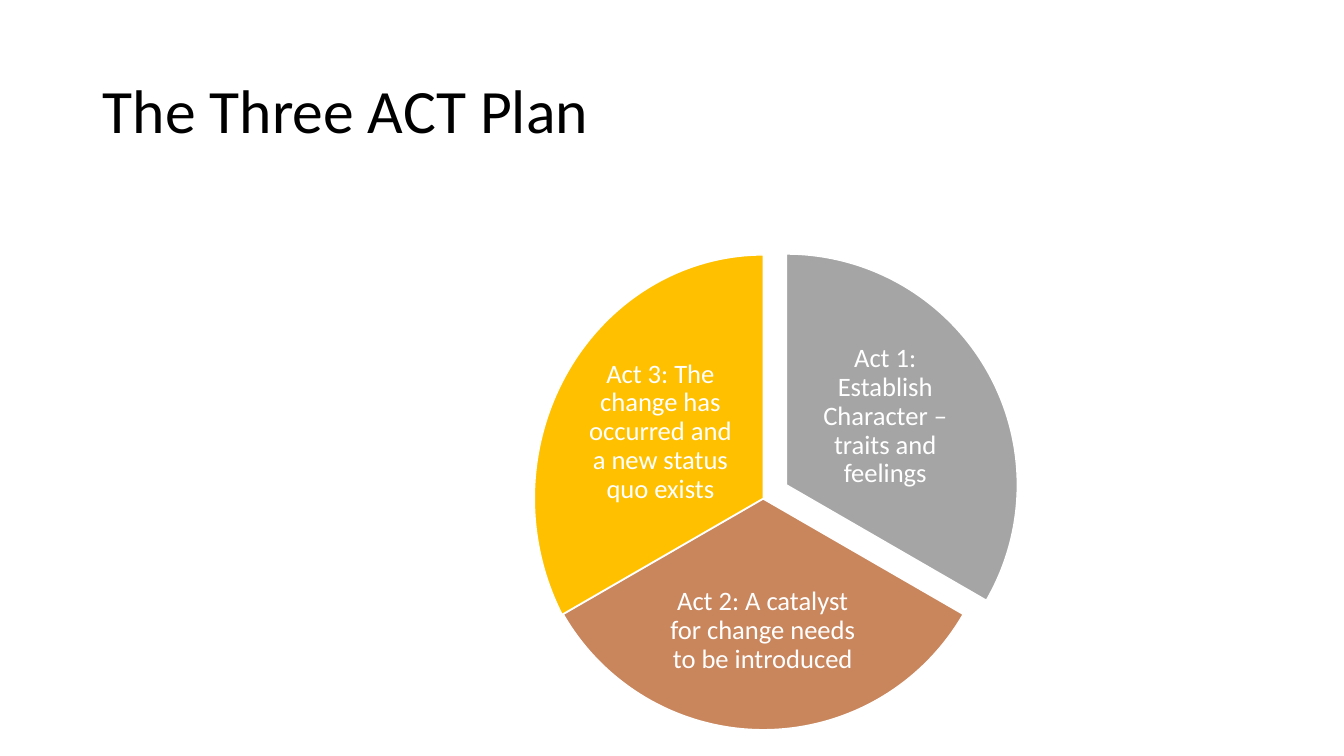
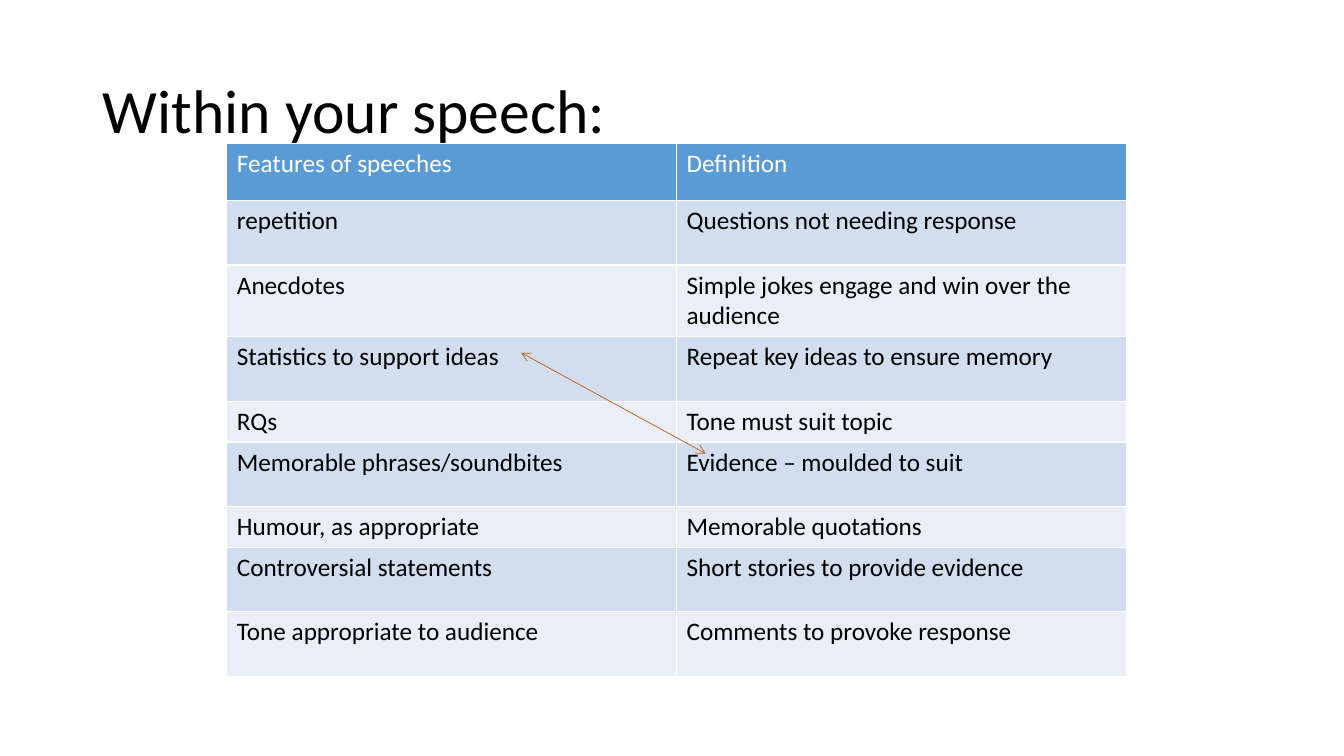
from lxml import etree
from pptx import Presentation
from pptx import util as u
from pptx.dml.color import RGBColor
from pptx.enum import shapes, text
from pptx.oxml.ns import qn

FONT = "Calibri"
BLACK = "000000"
WHITE = "FFFFFF"
HEADER = "5B9BD5"
BANDS = ("D2DEEF", "EAEFF7")
ARROW = "C55A11"
ADJUSTMENT_PER_DEGREE = 0.6

ACTS = [
    ("Act 1: Establish Character – traits and feelings", "A5A5A5",
     (5.51, 2.52, 4.58, 4.58), (270, 30), (8, 3.37, 1.56, 1.53)),
    ("Act 2: A catalyst for change needs to be introduced", "C9855C",
     (5.28, 2.66, 4.58, 4.58), (30, 150), (6.53, 5.55, 2.07, 1.42)),
    ("Act 3: The change has occurred and a new status quo exists", "FFC000",
     (5.3, 2.53, 4.54, 4.83), (150, 270), (5.78, 3.48, 1.54, 1.61)),
]

FEATURES = [
    ("Features of speeches", "Definition", 0.57),
    ("repetition", "Questions not needing response", 0.64),
    ("Anecdotes", "Simple jokes engage and win over the audience", 0.64),
    ("Statistics to support ideas", "Repeat key ideas to ensure memory", 0.64),
    ("RQs", "Tone must suit topic", 0.37),
    ("Memorable phrases/soundbites", "Evidence – moulded to suit", 0.64),
    ("Humour, as appropriate", "Memorable quotations", 0.37),
    ("Controversial statements", "Short stories to provide evidence", 0.64),
    ("Tone appropriate to audience", "Comments to provoke response", 0.64),
]


def color(value):
    return RGBColor.from_string(value)


def inches(box):
    return [u.Inches(length) for length in box]


def fill(target, value):
    target.fill.solid()
    target.fill.fore_color.rgb = color(value)


def format_paragraph(paragraph, size, value, align=text.PP_ALIGN.LEFT, spacing=1.0):
    paragraph.alignment = align
    paragraph.line_spacing = spacing
    paragraph.font.name = FONT
    paragraph.font.size = u.Pt(size)
    paragraph.font.bold = False
    paragraph.font.color.rgb = color(value)


def add_titled_slide(presentation, title_text):
    slide = presentation.slides.add_slide(presentation.slide_layouts[5])
    title = slide.shapes.title
    title.left, title.top, title.width, title.height = inches((0.92, 0.4, 11.5, 1.45))
    frame = title.text_frame
    frame.text = title_text
    frame.vertical_anchor = text.MSO_ANCHOR.MIDDLE
    format_paragraph(frame.paragraphs[0], 44, BLACK, spacing=0.9)
    return slide


def add_slice(group, box, angles, value):
    pie = group.shapes.add_shape(shapes.MSO_SHAPE.PIE, *inches(box))
    for index, angle in enumerate(angles):
        pie.adjustments[index] = angle * ADJUSTMENT_PER_DEGREE
    pie.shadow.inherit = False
    fill(pie, value)
    pie.line.color.rgb = color(WHITE)
    pie.line.width = u.Pt(1)


def add_label(group, box, label_text):
    frame = group.shapes.add_textbox(*inches(box)).text_frame
    frame.word_wrap = True
    frame.vertical_anchor = text.MSO_ANCHOR.MIDDLE
    frame.margin_left = frame.margin_right = u.Inches(0.03)
    frame.margin_top = frame.margin_bottom = u.Inches(0.03)
    frame.text = label_text
    format_paragraph(frame.paragraphs[0], 19, WHITE, text.PP_ALIGN.CENTER, 0.9)


def add_borders(cell, value, points):
    properties = cell._tc.get_or_add_tcPr()
    for side in ("lnL", "lnR", "lnT", "lnB"):
        line = etree.SubElement(properties, qn(f"a:{side}"), w=str(u.Pt(points)))
        solid = etree.SubElement(line, qn("a:solidFill"))
        etree.SubElement(solid, qn("a:srgbClr"), val=value)


def add_feature_table(slide):
    height = sum(row[-1] for row in FEATURES)
    frame = slide.shapes.add_table(len(FEATURES), 2, *inches((2.25, 1.42, 8.92, height)))
    table = frame.table
    for row_index, (*words, row_height) in enumerate(FEATURES):
        is_header = row_index == 0
        table.rows[row_index].height = u.Inches(row_height)
        for column_index, word in enumerate(words):
            cell = table.cell(row_index, column_index)
            cell.text = word
            format_paragraph(cell.text_frame.paragraphs[0], 18, WHITE if is_header else BLACK)
            add_borders(cell, WHITE, 1)
            fill(cell, HEADER if is_header else BANDS[(row_index - 1) % 2])


def add_double_arrow(slide, start, end, value, points):
    arrow = slide.shapes.add_connector(
        shapes.MSO_CONNECTOR.STRAIGHT, *inches((*start, *end)))
    arrow.line.color.rgb = color(value)
    arrow.line.width = u.Pt(points)
    line = arrow.line._get_or_add_ln()
    for tip in ("headEnd", "tailEnd"):
        etree.SubElement(line, qn(f"a:{tip}"), type="arrow")
    etree.SubElement(arrow._element.spPr, qn("a:effectLst"))


def build_acts(presentation):
    slide = add_titled_slide(presentation, "The Three ACT Plan")
    group = slide.shapes.add_group_shape()
    for label_text, value, slice_box, angles, label_box in ACTS:
        add_slice(group, slice_box, angles, value)
        add_label(group, label_box, label_text)


def build_features(presentation):
    slide = add_titled_slide(presentation, "Within your speech:")
    add_feature_table(slide)
    add_double_arrow(slide, (5.17, 3.5), (7, 4.5), ARROW, 0.5)


def main():
    presentation = Presentation()
    presentation.slide_width = u.Inches(13.33)
    presentation.slide_height = u.Inches(7.5)
    build_acts(presentation)
    build_features(presentation)
    presentation.save("out.pptx")


if __name__ == "__main__":
    main()
